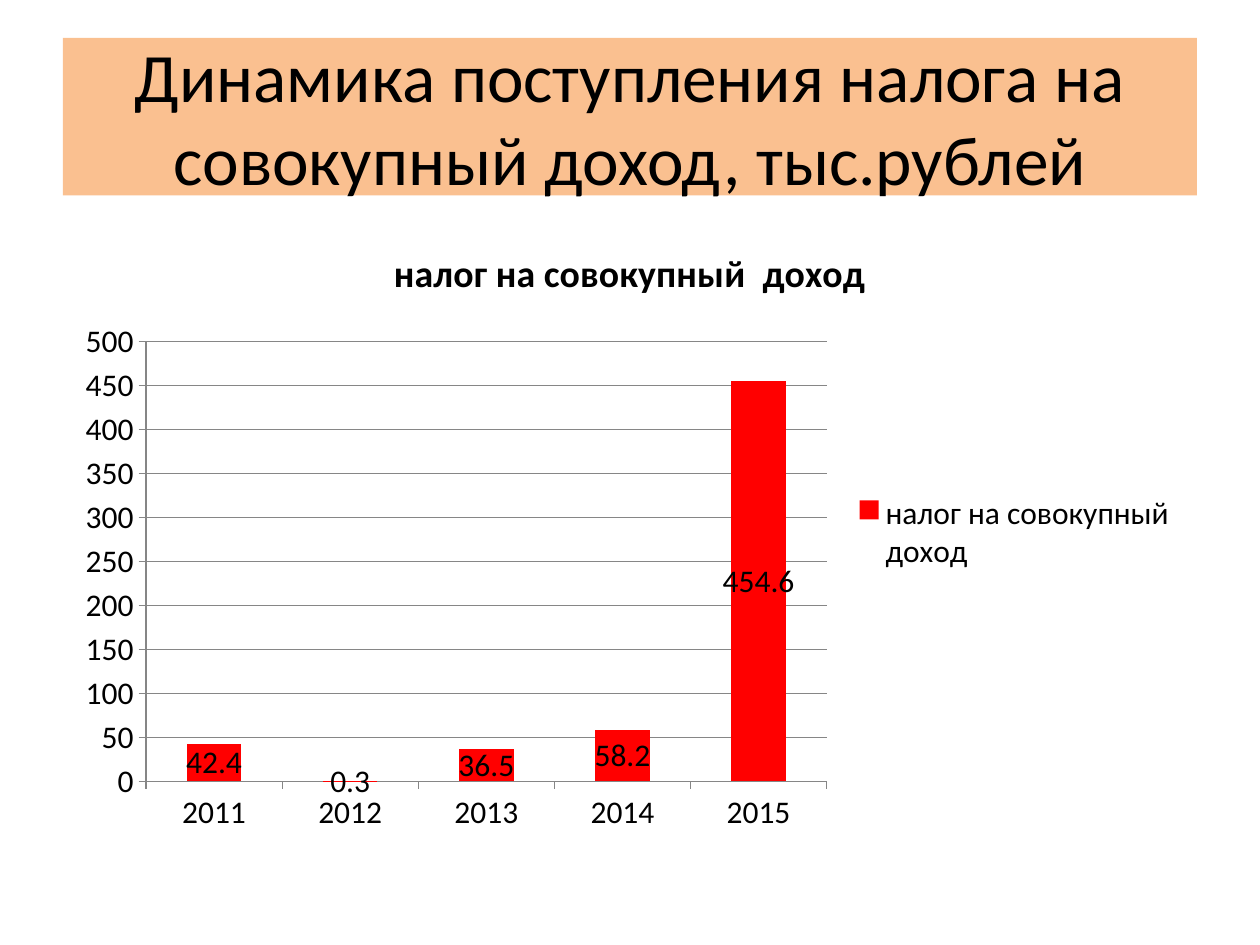
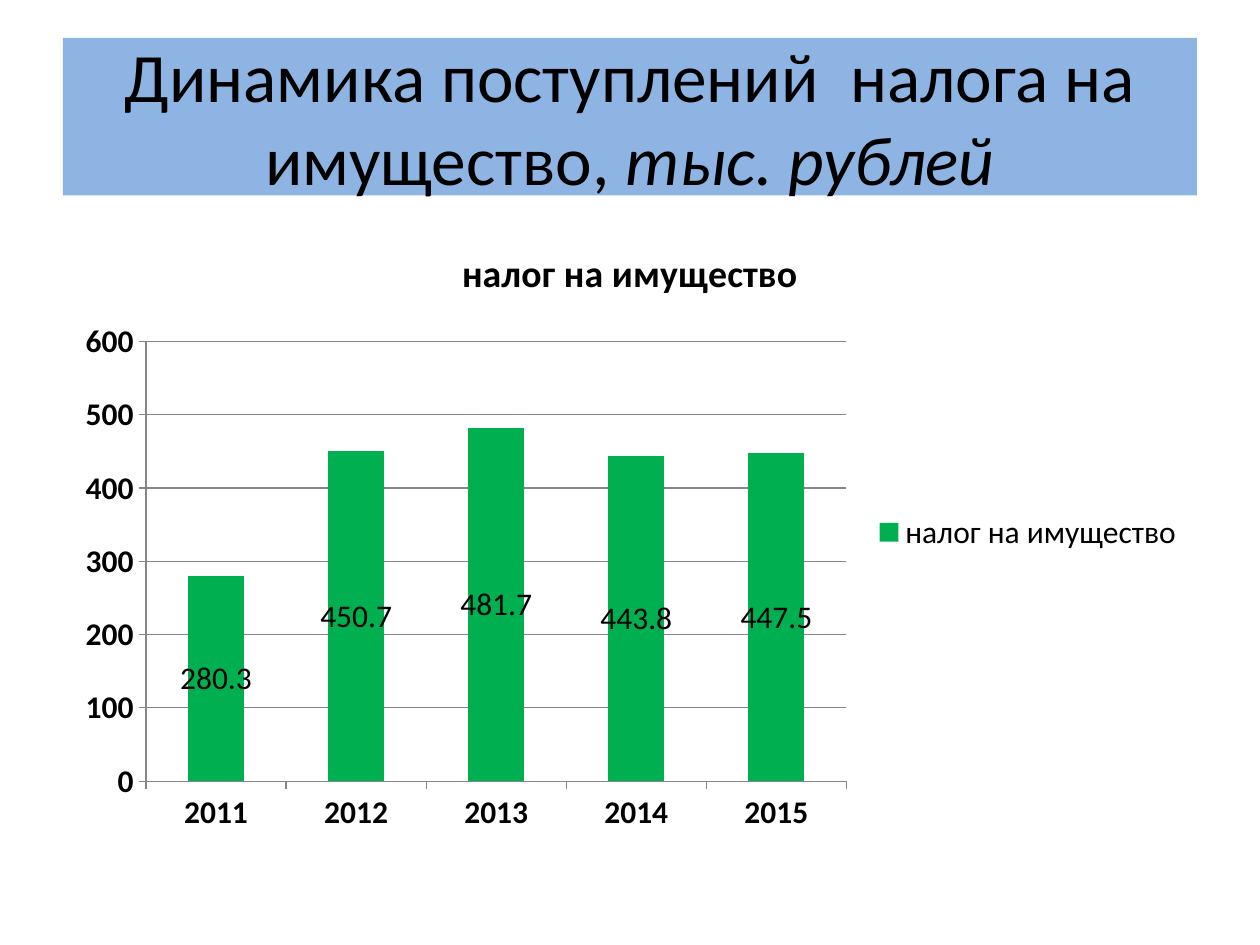
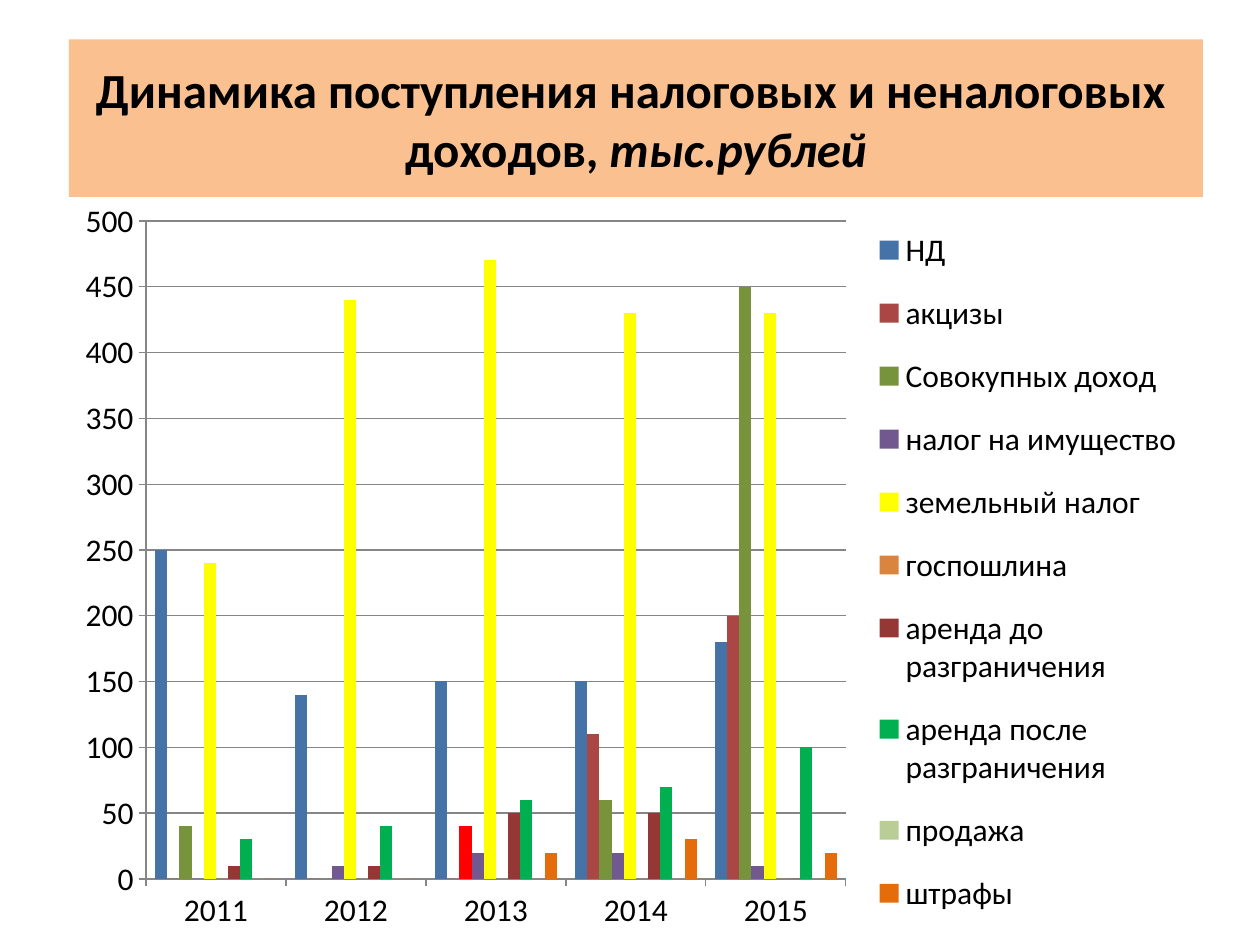
from lxml.etree import SubElement
from pptx import Presentation
from pptx.chart.data import CategoryChartData
from pptx.dml.color import RGBColor
from pptx.enum.chart import XL_CHART_TYPE, XL_LABEL_POSITION, XL_LEGEND_POSITION, XL_TICK_MARK
from pptx.enum.shapes import MSO_SHAPE
from pptx.enum.text import MSO_ANCHOR, PP_ALIGN
from pptx.oxml.ns import qn
from pptx.util import Pt

FONT = "Calibri"
BLACK = RGBColor(0x00, 0x00, 0x00)
GRID = RGBColor(0x86, 0x86, 0x86)
PEACH = RGBColor(0xFA, 0xC0, 0x90)
SKY = RGBColor(0x8E, 0xB4, 0xE3)
RED = RGBColor(0xFF, 0x00, 0x00)
GREEN = RGBColor(0x00, 0xB0, 0x50)
BLUE = RGBColor(0x45, 0x72, 0xA7)
BRICK = RGBColor(0xAA, 0x46, 0x43)
OLIVE = RGBColor(0x77, 0x93, 0x3C)
PURPLE = RGBColor(0x71, 0x58, 0x8F)
YELLOW = RGBColor(0xFF, 0xFF, 0x00)
AMBER = RGBColor(0xDB, 0x84, 0x3D)
MAROON = RGBColor(0x95, 0x37, 0x35)
PALE_GREEN = RGBColor(0xB9, 0xCD, 0x96)
ORANGE = RGBColor(0xE4, 0x6C, 0x0A)

YEARS = ["2011", "2012", "2013", "2014", "2015"]
CONTENT_W = 648

prs = Presentation()
prs.slide_width, prs.slide_height = Pt(720), Pt(540)


def add_title(s, left, top, fill, size, bold, text, italic_text=""):
    """Coloured title band; the unit of measure may be in italics."""
    sp = s.shapes.add_shape(MSO_SHAPE.RECTANGLE, Pt(left), Pt(top), Pt(CONTENT_W), Pt(90))
    sp.shadow.inherit = False
    sp.fill.solid()
    sp.fill.fore_color.rgb = fill
    sp.line.fill.background()
    tf = sp.text_frame
    tf.word_wrap = True
    tf.vertical_anchor = MSO_ANCHOR.MIDDLE
    p = tf.paragraphs[0]
    p.alignment = PP_ALIGN.CENTER
    for part, italic in ((text, False), (italic_text, True)):
        if part:
            r = p.add_run()
            r.text = part
            r.font.name, r.font.size = FONT, Pt(size)
            r.font.bold, r.font.italic = bold, italic
            r.font.color.rgb = BLACK


def add_columns(s, kind, top, height, series, maximum, step, bold_axes=False):
    """Column chart by year with a legend on the right."""
    data = CategoryChartData()
    data.categories = YEARS
    for name, color, values in series:
        data.add_series(name, values)
    chart = s.shapes.add_chart(kind, Pt(36), Pt(top), Pt(CONTENT_W), Pt(height), data).chart
    chart.font.name, chart.font.size = FONT, Pt(18)
    chart.font.color.rgb = BLACK
    chart.has_title = False
    chart.has_legend = True
    chart.legend.position = XL_LEGEND_POSITION.RIGHT
    chart.legend.include_in_layout = False

    plot = chart.plots[0]
    plot.vary_by_categories = False
    plot.gap_width = 150
    for ser, (name, color, values) in zip(plot.series, series):
        ser.invert_if_negative = False
        ser.format.fill.solid()
        ser.format.fill.fore_color.rgb = color

    value_axis = chart.value_axis
    value_axis.minimum_scale, value_axis.maximum_scale = 0, maximum
    value_axis.major_unit = step
    value_axis.has_major_gridlines = True
    value_axis.major_gridlines.format.line.color.rgb = GRID
    for axis in (chart.category_axis, value_axis):
        axis.major_tick_mark = XL_TICK_MARK.OUTSIDE
        axis.format.line.color.rgb = GRID
        font = axis.tick_labels.font
        font.name, font.size, font.bold = FONT, Pt(18), bold_axes
        font.color.rgb = BLACK
    return chart


# Slides 1 and 2: one tax each, with a chart title and value labels
single_tax_slides = [
    (PEACH, "Динамика поступления налога на совокупный доход, тыс.рублей", "",
     ("налог на совокупный  доход", RED, (42.4, 0.3, 36.5, 58.2, 454.6)), 500, 50, False),
    (SKY, "Динамика поступлений  налога на имущество, ", "тыс. рублей",
     ("налог на имущество", GREEN, (280.3, 450.7, 481.7, 443.8, 447.5)), 600, 100, True),
]
for band, text, unit, tax, maximum, step, bold_axes in single_tax_slides:
    s = prs.slides.add_slide(prs.slide_layouts[6])
    add_title(s, 36, 21.6, band, 39.6, False, text, unit)
    chart = add_columns(s, XL_CHART_TYPE.COLUMN_STACKED, 126, 356.4, [tax],
                        maximum, step, bold_axes)
    chart.has_title = True
    chart.chart_title.include_in_layout = False
    p = chart.chart_title.text_frame.paragraphs[0]
    p.text = tax[0]
    font = p.runs[0].font
    font.name, font.size, font.bold = FONT, Pt(21.6), True
    font.color.rgb = BLACK
    plot = chart.plots[0]
    plot.overlap = 100
    plot.has_data_labels = True
    labels = plot.data_labels
    labels.show_value = True
    labels.position = XL_LABEL_POSITION.CENTER
    labels.font.name, labels.font.size = FONT, Pt(18)
    labels.font.color.rgb = BLACK

# Slide 3: all tax and non-tax revenue, rounded to tens
revenue = [
    ("НД", BLUE, (250, 140, 150, 150, 180)),
    ("акцизы", BRICK, (0, 0, 0, 110, 200)),
    ("Совокупных доход", OLIVE, (40, 0, 40, 60, 450)),
    ("налог на имущество", PURPLE, (0, 10, 20, 20, 10)),
    ("земельный налог", YELLOW, (240, 440, 470, 430, 430)),
    ("госпошлина", AMBER, (0, 0, 0, 0, 0)),
    ("аренда до разграничения", MAROON, (10, 10, 50, 50, 0)),
    ("аренда после разграничения", GREEN, (30, 40, 60, 70, 100)),
    ("продажа", PALE_GREEN, (0, 0, 0, 0, 0)),
    ("штрафы", ORANGE, (0, 0, 20, 30, 20)),
]
chart_top, chart_h = 106.8, 433.2
s = prs.slides.add_slide(prs.slide_layouts[6])
add_title(s, 39.4, 22.5, PEACH, 28, True,
          "Динамика поступления налоговых и неналоговых  доходов, ", "тыс.рублей")
chart = add_columns(s, XL_CHART_TYPE.COLUMN_CLUSTERED, chart_top, chart_h, revenue, 500, 50)
income_2013 = chart.plots[0].series[2].points[2].format.fill
income_2013.solid()
income_2013.fore_color.rgb = RED

# Fixed places for the plot and the one-column legend, in points within the chart
plot_area = chart._chartSpace.chart.plotArea
legend = chart.legend._element
places = [
    (plot_area, 0, "inner", (47.4, 19.5, 400, 376)),
    (legend, 1, None, (458, 11, 187, 418)),
]
for part, index, target, (x, y, w, h) in places:
    for old in part.findall(qn("c:layout")):
        part.remove(old)
    layout = SubElement(part, qn("c:layout"))
    part.insert(index, layout)
    manual = SubElement(layout, qn("c:manualLayout"))
    settings = [("layoutTarget", target)] if target else []
    settings += [("xMode", "edge"), ("yMode", "edge"),
                 ("x", x / CONTENT_W), ("y", y / chart_h),
                 ("w", w / CONTENT_W), ("h", h / chart_h)]
    for tag, value in settings:
        SubElement(manual, qn("c:" + tag)).set("val", str(value))

prs.save("out.pptx")
